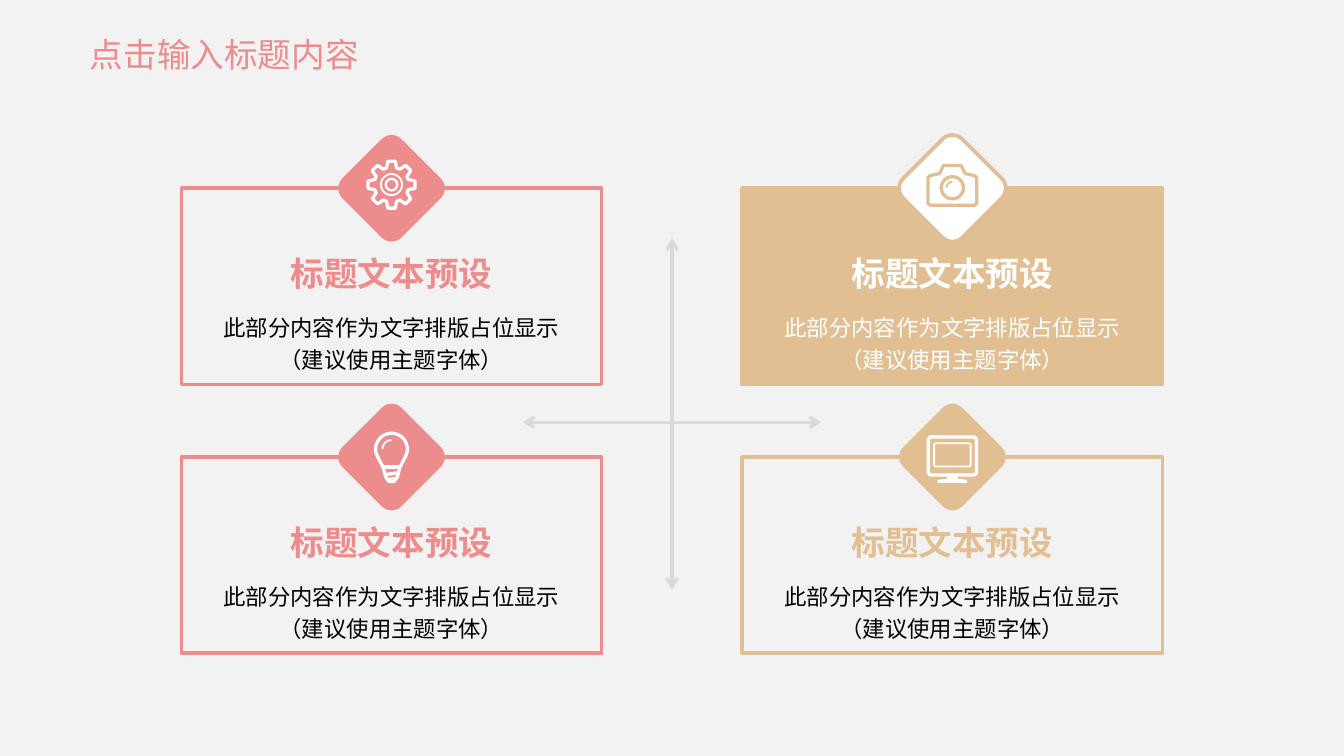
from dataclasses import dataclass
from math import cos, radians, sin

from lxml import etree
from pptx import Presentation
from pptx.dml.color import RGBColor
from pptx.enum.shapes import MSO_CONNECTOR, MSO_SHAPE
from pptx.enum.text import MSO_ANCHOR, PP_ALIGN
from pptx.oxml.ns import qn
from pptx.util import Cm, Pt

RECT = MSO_SHAPE.RECTANGLE
ROUND = MSO_SHAPE.ROUNDED_RECTANGLE
OVAL = MSO_SHAPE.OVAL
STRAIGHT = MSO_CONNECTOR.STRAIGHT
CENTER, LEFT = PP_ALIGN.CENTER, PP_ALIGN.LEFT
TOP, MIDDLE = MSO_ANCHOR.TOP, MSO_ANCHOR.MIDDLE


@dataclass(frozen=True)
class Theme:
    pink: str = "EC8C8D"
    tan: str = "E2BF93"
    white: str = "FFFFFF"
    black: str = "000000"
    axis: str = "D9D9D9"
    background: str = "F2F2F2"
    heading_font: str = "Noto Sans CJK SC"
    card_font: str = "Calibri"
    title_size: float = 18
    body_size: float = 12
    border: float = 2
    axis_width: float = 1.75


@dataclass(frozen=True)
class Preset:
    kind: int
    y: float
    w: float
    h: float
    weight: float


@dataclass(frozen=True)
class Path:
    points: list[tuple[float, float]]
    weight: float
    closed: bool = False
    filled: bool = False


@dataclass(frozen=True)
class Card:
    col: int
    row: int
    color: str
    icon: list[Preset | Path]
    solid: bool = False


THEME = Theme()
COLS, ROWS = (3.43, 14.03), (3.56, 8.64)
CARD_W, CARD_H, DIAMOND = 7.94, 3.71, 1.58
BODY_LINES = ("此部分内容作为文字排版占位显示", "（建议使用主题字体）")


def polar(r: float, angle: float, y: float) -> tuple[float, float]:
    return r * cos(radians(angle)), y + r * sin(radians(angle))


def arc(r: float, start: int, end: int, y: float) -> list[tuple[float, float]]:
    return [polar(r, a, y) for a in range(start, end + 1, 10)]


def mirrored(right: list[tuple[float, float]]) -> list[tuple[float, float]]:
    return right + [(-x, y) for x, y in reversed(right)]


GEAR_TOOTH = ((0.33, -17), (0.45, -9), (0.45, 9), (0.33, 17))
GEAR = [
    Path([polar(r, t + a, -0.07) for t in range(0, 360, 45) for r, a in GEAR_TOOTH],
         1.75, closed=True),
    Preset(OVAL, -0.07, 0.4, 0.4, 1),
    Preset(OVAL, -0.07, 0.22, 0.22, 1.25),
]
BULB = [
    Path(arc(0.3, 150, 390, -0.15)
         + mirrored([(0.16, 0.19), (0.11, 0.38), (0.05, 0.46)]), 1.75, closed=True),
    Path([(-0.16, 0.19), (0.16, 0.19)], 2),
    Path([(-0.1, 0.33), (0.1, 0.3)], 1.75),
    Path([(-0.1, 0.42), (0.1, 0.39)], 1.25),
    Path(arc(0.17, 180, 270, -0.15), 1),
]
CAMERA = [
    Path(mirrored([(0.17, -0.43), (0.24, -0.28), (0.42, -0.24), (0.46, -0.2),
                   (0.46, 0.28), (0.42, 0.32)]), 1.75, closed=True),
    Preset(OVAL, -0.01, 0.42, 0.42, 1.75),
    Path(arc(0.11, 180, 270, -0.01), 1),
]
MONITOR = [
    Preset(ROUND, -0.02, 0.91, 0.72, 1.75),
    Preset(ROUND, -0.04, 0.69, 0.44, 1),
    Path(mirrored([(0.09, 0.36), (0.09, 0.42), (0.27, 0.44), (0.27, 0.48)]),
         0.5, closed=True, filled=True),
]
CARDS = [
    Card(0, 0, THEME.pink, GEAR),
    Card(0, 1, THEME.pink, BULB),
    Card(1, 1, THEME.tan, MONITOR),
    Card(1, 0, THEME.tan, CAMERA, solid=True),
]


def style(sp, fill: str | None, line: str | None, weight: float = 0) -> None:
    sp.shadow.inherit = False
    if fill:
        sp.fill.solid()
        sp.fill.fore_color.rgb = RGBColor.from_string(fill)
    else:
        sp.fill.background()
    if line:
        sp.line.color.rgb = RGBColor.from_string(line)
        sp.line.width = Pt(weight)
    else:
        sp.line.fill.background()


def add_box(shapes, kind: int, x: float, y: float, w: float, h: float):
    return shapes.add_shape(kind, Cm(x), Cm(y), Cm(w), Cm(h))


def add_text(shapes, x: float, y: float, w: float, h: float, lines: tuple[str, ...],
             font: str, size: float, color: str, bold: bool = False,
             align: int = CENTER, anchor: int = TOP, wrap: bool = True,
             insets: tuple[float, float] = (0, 0), spacing: float = 1.0) -> None:
    tf = shapes.add_textbox(Cm(x), Cm(y), Cm(w), Cm(h)).text_frame
    tf.word_wrap = wrap
    tf.vertical_anchor = anchor
    tf.margin_left = tf.margin_right = Cm(insets[0])
    tf.margin_top = tf.margin_bottom = Cm(insets[1])
    p = tf.paragraphs[0]
    p.alignment = align
    p.line_spacing = spacing
    for i, line in enumerate(lines):
        if i:
            p.add_line_break()
        r = p.add_run()
        r.text = line
        r.font.name, r.font.size, r.font.bold = font, Pt(size), bold
        r.font.color.rgb = RGBColor.from_string(color)


def draw_icon(shapes, icon: list[Preset | Path], cx: float, cy: float, color: str) -> None:
    for part in icon:
        if isinstance(part, Preset):
            sp = add_box(shapes, part.kind, cx - part.w / 2, cy + part.y - part.h / 2,
                         part.w, part.h)
            if part.kind == ROUND:
                sp.adjustments[0] = 0.08
            style(sp, None, color, part.weight)
        else:
            points = [(Cm(cx + x), Cm(cy + y)) for x, y in part.points]
            fb = shapes.build_freeform(*points[0])
            fb.add_line_segments(points[1:], close=part.closed)
            style(fb.convert_to_shape(), color if part.filled else None, color, part.weight)


def draw_card(s, card: Card) -> None:
    shapes = s.shapes.add_group_shape().shapes
    x, y = COLS[card.col], ROWS[card.row]
    cx = x + CARD_W / 2
    accent = THEME.white if card.solid else card.color
    style(add_box(shapes, RECT, x, y, CARD_W, CARD_H),
          card.color if card.solid else None, card.color, THEME.border)
    add_text(shapes, x, y + 1.23, CARD_W, 0.93, ("标题文本预设",), THEME.card_font,
             THEME.title_size, accent, bold=True, wrap=False)
    add_text(shapes, x, y + 2.15, CARD_W, 1.54, BODY_LINES, THEME.card_font,
             THEME.body_size, THEME.white if card.solid else THEME.black,
             insets=(0.25, 0.13), spacing=1.2)
    sp = add_box(shapes, ROUND, cx - DIAMOND / 2, y - DIAMOND / 2, DIAMOND, DIAMOND)
    sp.rotation = 45
    style(sp, accent, card.color if card.solid else None, THEME.border)
    draw_icon(shapes, card.icon, cx, y, card.color if card.solid else THEME.white)


def draw_axis(s, x1: float, y1: float, x2: float, y2: float) -> None:
    c = s.shapes.add_connector(STRAIGHT, Cm(x1), Cm(y1), Cm(x2), Cm(y2))
    c.line.color.rgb = RGBColor.from_string(THEME.axis)
    c.line.width = Pt(THEME.axis_width)
    ln = c.line._get_or_add_ln()
    for end in ("a:headEnd", "a:tailEnd"):
        etree.SubElement(ln, qn(end), type="arrow")
    etree.SubElement(c._element.spPr, qn("a:effectLst"))


def main() -> None:
    prs = Presentation()
    prs.slide_width, prs.slide_height = Cm(25.4), Cm(14.29)
    s = prs.slides.add_slide(prs.slide_layouts[6])
    s.background.fill.solid()
    s.background.fill.fore_color.rgb = RGBColor.from_string(THEME.background)
    for card in CARDS:
        draw_card(s, card)
    draw_axis(s, 12.7, 4.5, 12.7, 11.15)
    draw_axis(s, 9.88, 7.98, 15.52, 7.98)
    add_text(s.shapes, 1.7, 0.49, 5.92, 1.07, ("点击输入标题内容",), THEME.heading_font,
             THEME.title_size, THEME.pink, align=LEFT, anchor=MIDDLE, insets=(0, 0.13))
    prs.save("out.pptx")


if __name__ == "__main__":
    main()
